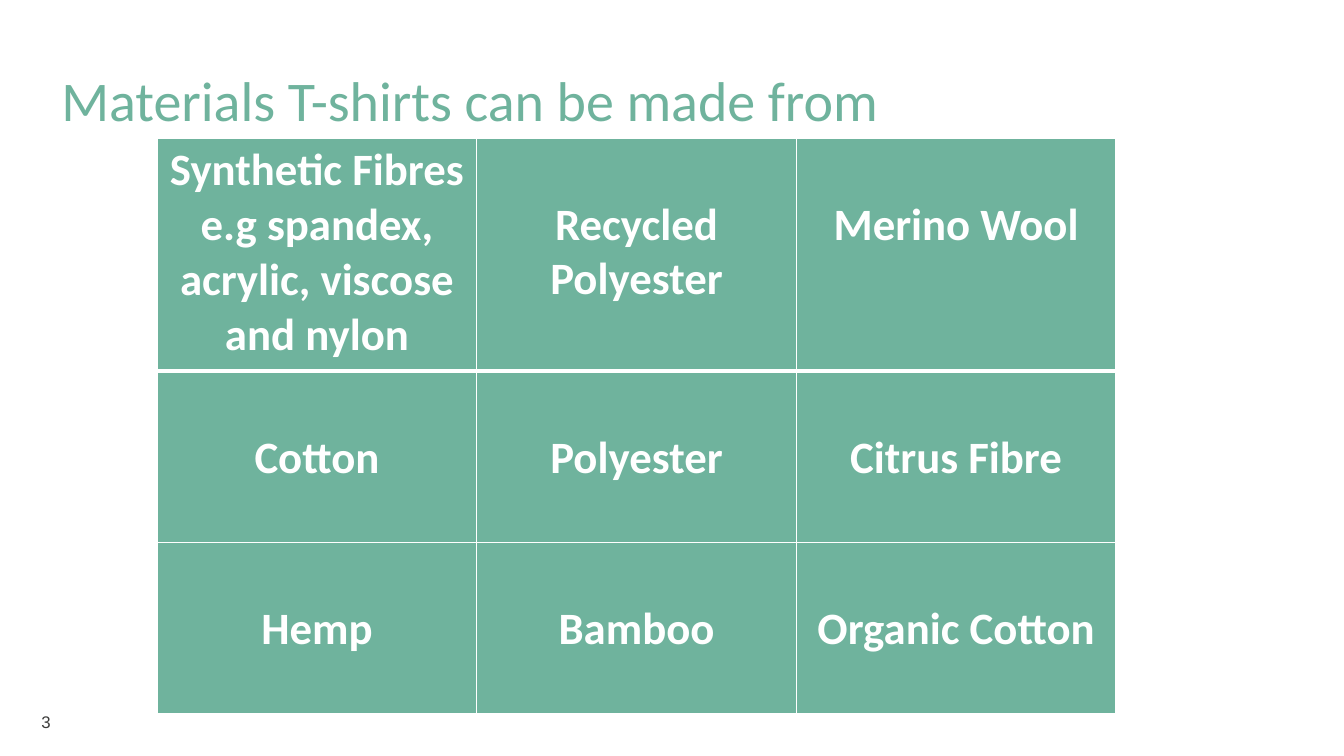
"""Build a slide with a grid of materials for T-shirts."""
from lxml import etree
from pptx import Presentation
from pptx.dml.color import RGBColor
from pptx.enum.text import PP_ALIGN
from pptx.oxml.ns import qn
from pptx.util import Inches, Pt

COLORS = {"green": "6FB39D", "white": "FFFFFF", "grey": "3C3C3B"}
MATERIALS = [
    ["Synthetic Fibres e.g spandex, acrylic, viscose and nylon", "Recycled Polyester", "Merino Wool"],
    ["Cotton", "Polyester", "Citrus Fibre"],
    ["Hemp", "Bamboo", "Organic Cotton"],
]
ROW_HEIGHTS = [2.31, 1.7, 1.7]
TOP_MARGIN, LINE_HEIGHT = 0.05, 0.54


class MaterialsSlide:
    def __init__(self, prs):
        self.slide = prs.slides.add_slide(prs.slide_layouts[6])

    def style(self, p, size, color, font="Calibri", bold=False):
        p.font.name = font
        p.font.size = Pt(size)
        p.font.bold = bold
        p.font.color.rgb = RGBColor.from_string(COLORS[color])

    def text(self, text, box, size, color, font="Calibri", inset=True):
        tf = self.slide.shapes.add_textbox(*map(Inches, box)).text_frame
        tf.word_wrap = True
        if not inset:
            tf.margin_left = tf.margin_right = tf.margin_top = tf.margin_bottom = 0
        p = tf.paragraphs[0]
        p.text = text
        self.style(p, size, color, font)

    def border(self, cell, side, width):
        tc_pr = cell._tc.get_or_add_tcPr()
        ln = etree.SubElement(tc_pr, qn(f"a:ln{side}"), w=str(Pt(width)))
        fill = etree.SubElement(ln, qn("a:solidFill"))
        etree.SubElement(fill, qn("a:srgbClr"), val=COLORS["white"])

    def cell(self, cell, text, widths, top):
        for side, width in widths.items():
            self.border(cell, side, width)
        cell.fill.solid()
        cell.fill.fore_color.rgb = RGBColor.from_string(COLORS["green"])
        cell.margin_top = Inches(top)
        p = cell.text_frame.paragraphs[0]
        p.text = text
        p.alignment = PP_ALIGN.CENTER
        self.style(p, 32, "white", bold=True)

    def table(self, rows, box, heights):
        shape = self.slide.shapes.add_table(len(rows), len(rows[0]), *map(Inches, box))
        table = shape.table
        for i, (row, height) in enumerate(zip(rows, heights)):
            table.rows[i].height = Inches(height)
            widths = {"L": 1, "R": 1, "T": 3 if i == 1 else 1, "B": 3 if i == 0 else 1}
            for j, text in enumerate(row):
                top = TOP_MARGIN if i == j == 0 else TOP_MARGIN + LINE_HEIGHT
                self.cell(table.cell(i, j), text, widths, top)


def main():
    prs = Presentation()
    prs.slide_width, prs.slide_height = Inches(13.33), Inches(7.5)
    s = MaterialsSlide(prs)
    s.text("3", (0.41, 7.06, 1.9, 0.2), 12, "grey", "Arial", inset=False)
    s.text("Materials T-shirts can be made from", (0.51, 0.6, 11.27, 0.77), 40, "green")
    s.table(MATERIALS, (1.56, 1.37, 9.51, sum(ROW_HEIGHTS)), ROW_HEIGHTS)
    prs.save("out.pptx")


if __name__ == "__main__":
    main()
